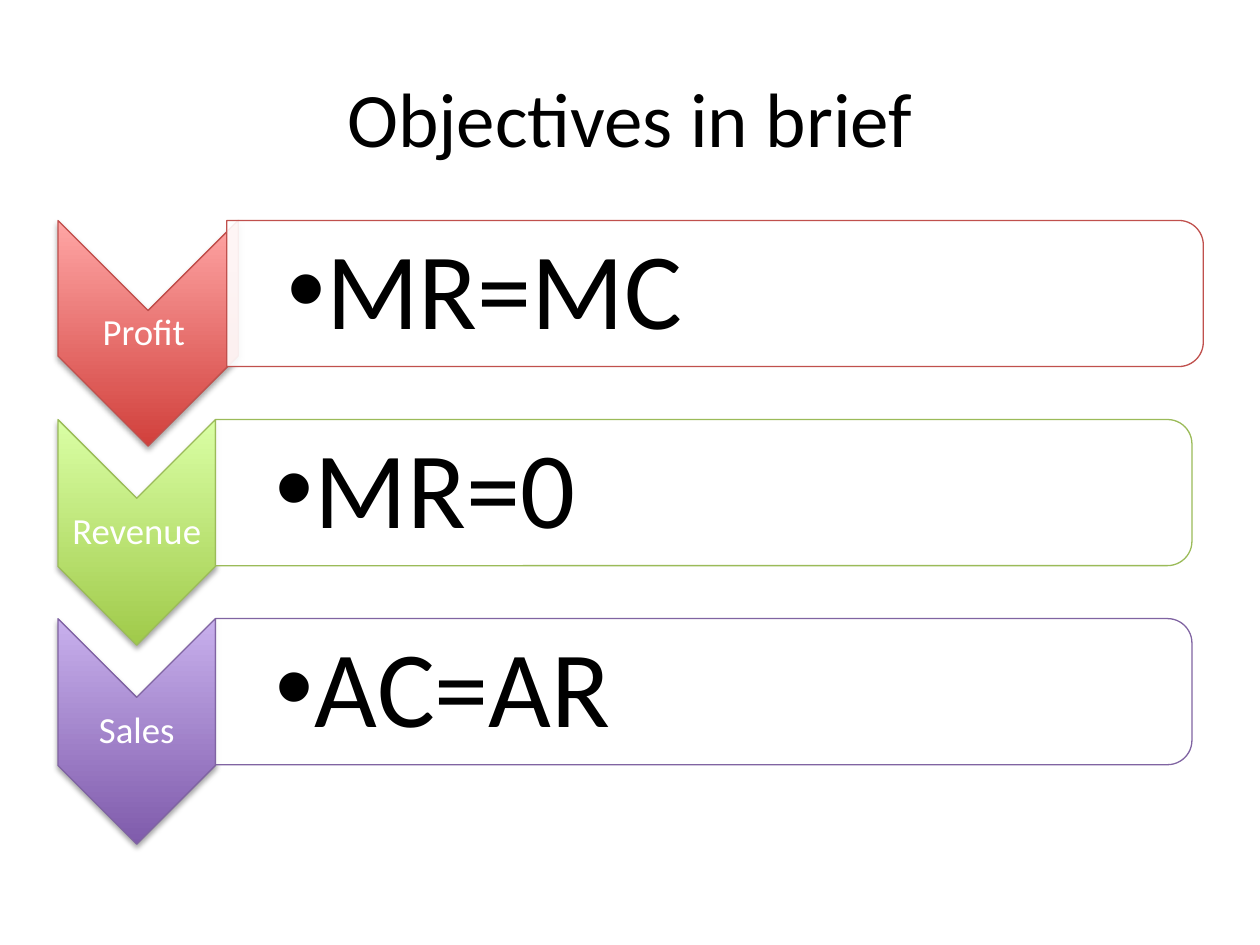
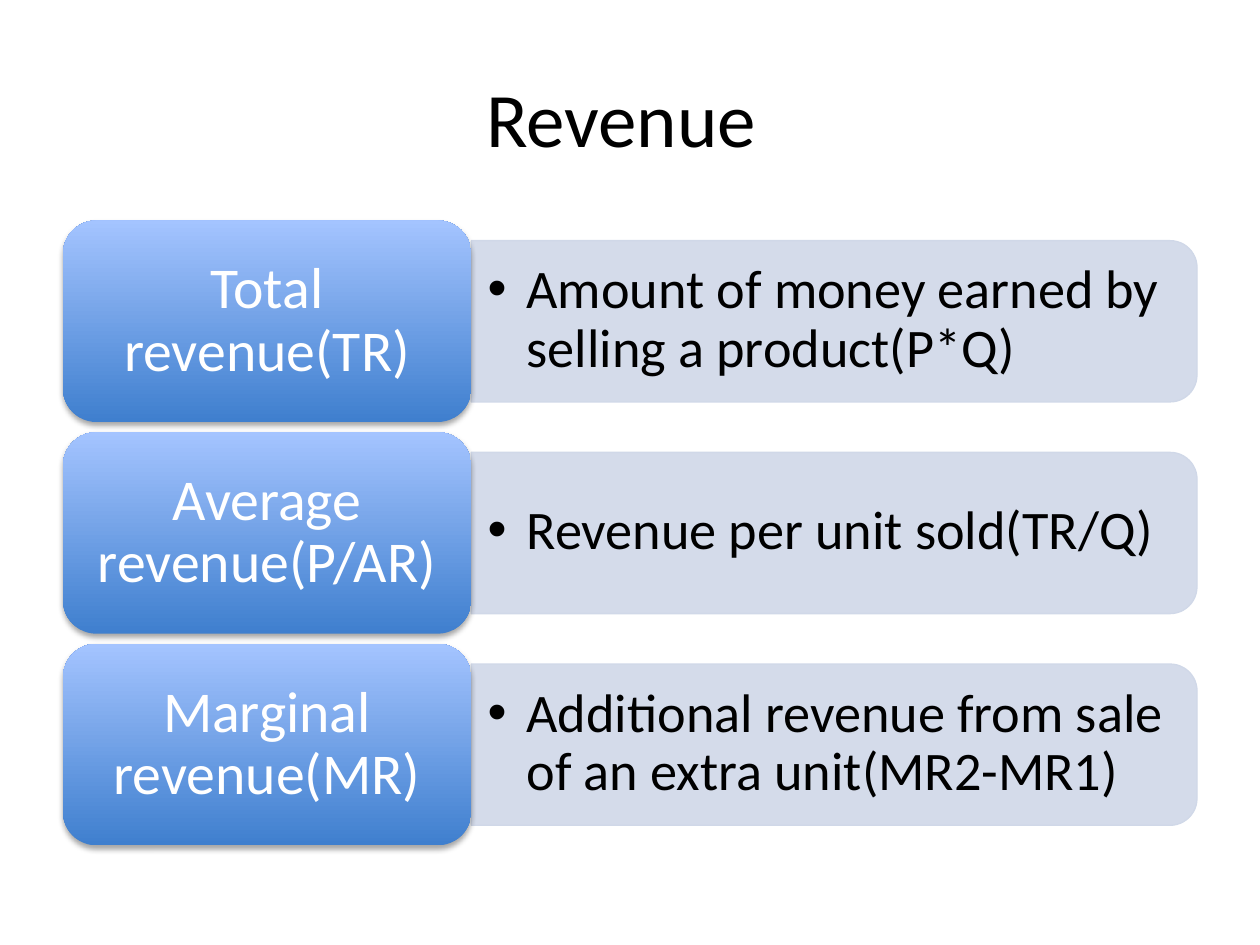
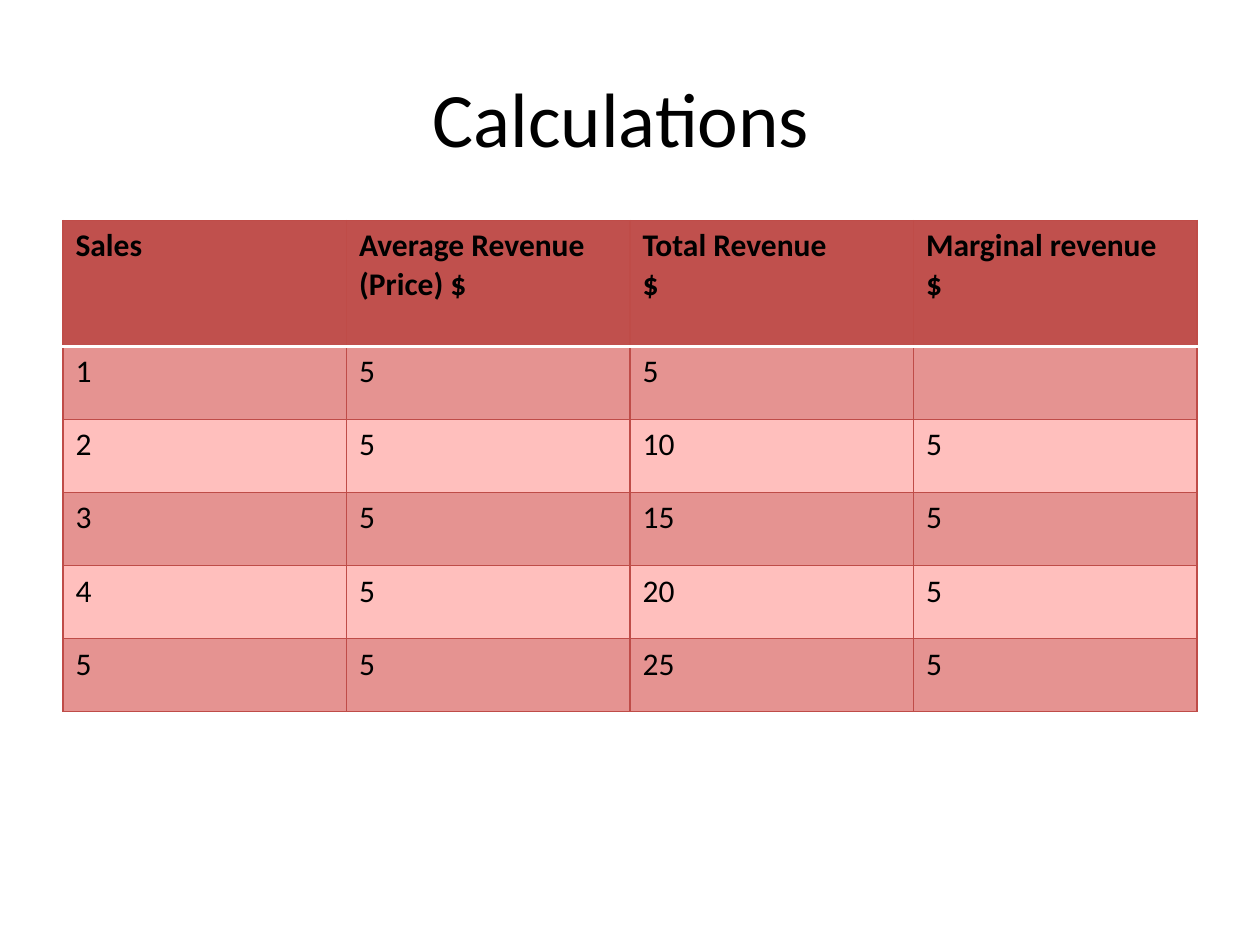
from lxml.etree import SubElement
from pptx import Presentation
from pptx.dml.color import RGBColor
from pptx.enum.shapes import MSO_SHAPE as SHAPE
from pptx.enum.text import MSO_ANCHOR as ANCHOR, PP_ALIGN as ALIGN
from pptx.oxml import parse_xml
from pptx.oxml.ns import nsdecls, qn
from pptx.util import Inches, Pt

FONT = "Calibri"
COLORS = {
    "black": "000000",
    "white": "FFFFFF",
    "red": "C0504D",
    "red_dark": "D1403C",
    "red_light": "FFA6A5",
    "green": "9BBB59",
    "green_dark": "A0CA4A",
    "green_light": "DAFFA5",
    "purple": "8064A2",
    "purple_dark": "7F5BAB",
    "purple_light": "C8B0ED",
    "blue_dark": "3F7FCE",
    "blue_light": "A4C4FF",
    "blue_pale": "D0D8E8",
    "table_border": "BF4C48",
    "row_dark": "E59391",
    "row_light": "FFBFBD",
}
BODY_LEFT, BODY_TOP, BODY_WIDTH = 0.5, 1.75, 9


def add_block(slide, kind, left, top, width, height, fills, line=None, turned=False):
    if turned:
        left, top = left + (width - height) / 2, top + (height - width) / 2
        width, height = height, width
    shape = slide.shapes.add_shape(kind, Inches(left), Inches(top), Inches(width), Inches(height))
    shape.rotation = 90 if turned else 0
    shape.shadow.inherit = False
    if line:
        shape.line.color.rgb = RGBColor.from_string(COLORS[line])
        shape.line.width = Pt(0.75)
    else:
        shape.line.fill.background()
    properties = shape.fill._xPr
    if len(fills) == 2:
        shape.fill.gradient()
        shape.fill.gradient_angle = 90
        for stop, color in zip(shape.fill.gradient_stops, fills):
            stop.color.rgb = RGBColor.from_string(COLORS[color])
        properties.find(qn("a:gradFill")).set("rotWithShape", "0")
        properties.find(qn("a:effectLst")).append(parse_xml(
            f'<a:outerShdw {nsdecls("a")} blurRad="40000" dist="23000" dir="5400000" rotWithShape="0">'
            '<a:srgbClr val="000000"><a:alpha val="35000"/></a:srgbClr></a:outerShdw>'))
    else:
        shape.fill.solid()
        shape.fill.fore_color.rgb = RGBColor.from_string(COLORS[fills[0]])
        color_element = properties.find(qn("a:solidFill")).find(qn("a:srgbClr"))
        SubElement(color_element, qn("a:alpha")).set("val", "90000")
    return shape


def write_text(shape, text, size, color="black", margins=(0.1, 0.05, 0.1, 0.05), spacing=0.9, bullet=False):
    frame = shape.text_frame
    frame.text = text
    frame.word_wrap = True
    frame.vertical_anchor = ANCHOR.MIDDLE
    frame.margin_left, frame.margin_top, frame.margin_right, frame.margin_bottom = map(Inches, margins)
    paragraph = frame.paragraphs[0]
    paragraph.alignment = ALIGN.LEFT if bullet else ALIGN.CENTER
    paragraph.line_spacing = spacing
    font = paragraph.runs[0].font
    font.name, font.size = FONT, Pt(size)
    font.color.rgb = RGBColor.from_string(COLORS[color])
    if bullet:
        properties = paragraph._p.get_or_add_pPr()
        properties.set("marL", str(Inches(0.31)))
        properties.set("indent", str(Inches(-0.31)))
        SubElement(properties, qn("a:buFont")).set("typeface", "Arial")
        SubElement(properties, qn("a:buChar")).set("char", "•")


presentation = Presentation()
presentation.slide_width, presentation.slide_height = Inches(10), Inches(7.5)

slides = []
for title in ["Objectives in brief", "Revenue ", "Calculations "]:
    slide = presentation.slides.add_slide(presentation.slide_layouts[6])
    title_box = slide.shapes.add_textbox(Inches(BODY_LEFT), Inches(0.3), Inches(BODY_WIDTH), Inches(1.25))
    write_text(title_box, title, 44, spacing=1.0)
    slides.append(slide)
objectives_slide, revenue_slide, calculations_slide = slides

objectives = [
    ("Profit ", "MR=MC", "red", 1.43, 1.8),
    ("Revenue", "MR=0", "green", 1.25, 1.71),
    ("Sales", "AC=AR", "purple", 1.25, 1.71),
]
chevron_left, chevron_height = 0.46, 1.79
for index, (label, condition, color, chevron_width, panel_left) in enumerate(objectives):
    top = BODY_TOP + index * 1.58
    add_block(objectives_slide, SHAPE.CHEVRON, chevron_left, top, chevron_width, chevron_height,
              [f"{color}_dark", f"{color}_light"], color, turned=True)
    label_box = objectives_slide.shapes.add_textbox(
        Inches(chevron_left), Inches(top + chevron_width / 2),
        Inches(chevron_width), Inches(chevron_height - chevron_width))
    write_text(label_box, label, 21, "white", margins=[0.01] * 4)
    add_block(objectives_slide, SHAPE.ROUND_2_SAME_RECTANGLE, panel_left, top, 7.75, 1.16,
              ["white"], color, turned=True)
    condition_box = objectives_slide.shapes.add_textbox(
        Inches(panel_left), Inches(top + 0.06), Inches(7.69), Inches(1.05))
    write_text(condition_box, condition, 62, margins=(0.48, 0.04, 0.04, 0.04), bullet=True)

revenues = [
    ("Total revenue(TR)", "Amount of money earned by selling a product(P*Q)"),
    ("Average revenue(P/AR)", "Revenue per unit sold(TR/Q)"),
    ("Marginal revenue(MR)", "Additional revenue from sale of an extra unit(MR2-MR1)"),
]
term_width = 3.24
panel_left = BODY_LEFT + term_width
for index, (term, meaning) in enumerate(revenues):
    top = BODY_TOP + index * 1.68
    add_block(revenue_slide, SHAPE.ROUND_2_SAME_RECTANGLE, panel_left, top + 0.16, 5.76, 1.28,
              ["blue_pale"], "blue_pale", turned=True)
    meaning_box = revenue_slide.shapes.add_textbox(
        Inches(panel_left), Inches(top + 0.22), Inches(5.7), Inches(1.15))
    write_text(meaning_box, meaning, 31, margins=(0.13, 0.06, 0.13, 0.06), bullet=True)
    term_block = add_block(revenue_slide, SHAPE.ROUNDED_RECTANGLE, BODY_LEFT, top, term_width, 1.6,
                           ["blue_dark", "blue_light"])
    write_text(term_block, term, 33, "white", margins=(0.14, 0.07, 0.14, 0.07))

rows = [
    ("Sales", "Average Revenue (Price) $", "Total Revenue\n$", "Marginal revenue\n$"),
    ("1", "5", "5", ""),
    ("2", "5", "10", "5"),
    ("3", "5", "15", "5"),
    ("4", "5", "20", "5"),
    ("5", "5", "25", "5"),
]
table = calculations_slide.shapes.add_table(
    len(rows), len(rows[0]), Inches(BODY_LEFT), Inches(BODY_TOP), Inches(BODY_WIDTH), Inches(3.9)).table
for row_index, values in enumerate(rows):
    is_header = row_index == 0
    table.rows[row_index].height = Inches(1 if is_header else 0.58)
    fill = "red" if is_header else "row_dark" if row_index % 2 else "row_light"
    for column_index, value in enumerate(values):
        cell = table.cell(row_index, column_index)
        cell.text = value
        cell.fill.solid()
        cell.fill.fore_color.rgb = RGBColor.from_string(COLORS[fill])
        for paragraph in cell.text_frame.paragraphs:
            paragraph.font.size = Pt(18)
            for run in paragraph.runs:
                run.font.name, run.font.size, run.font.bold = FONT, Pt(18), is_header
                run.font.color.rgb = RGBColor.from_string(COLORS["black"])
        for position, side in enumerate(["lnL", "lnR", "lnT", "lnB"]):
            under_header = (row_index, side) in [(0, "lnB"), (1, "lnT")]
            color, width = ("white", 2) if under_header else ("table_border", 0.75)
            cell._tc.get_or_add_tcPr().insert(position, parse_xml(
                f'<a:{side} {nsdecls("a")} w="{Pt(width)}"><a:solidFill>'
                f'<a:srgbClr val="{COLORS[color]}"/></a:solidFill></a:{side}>'))

presentation.save("out.pptx")
